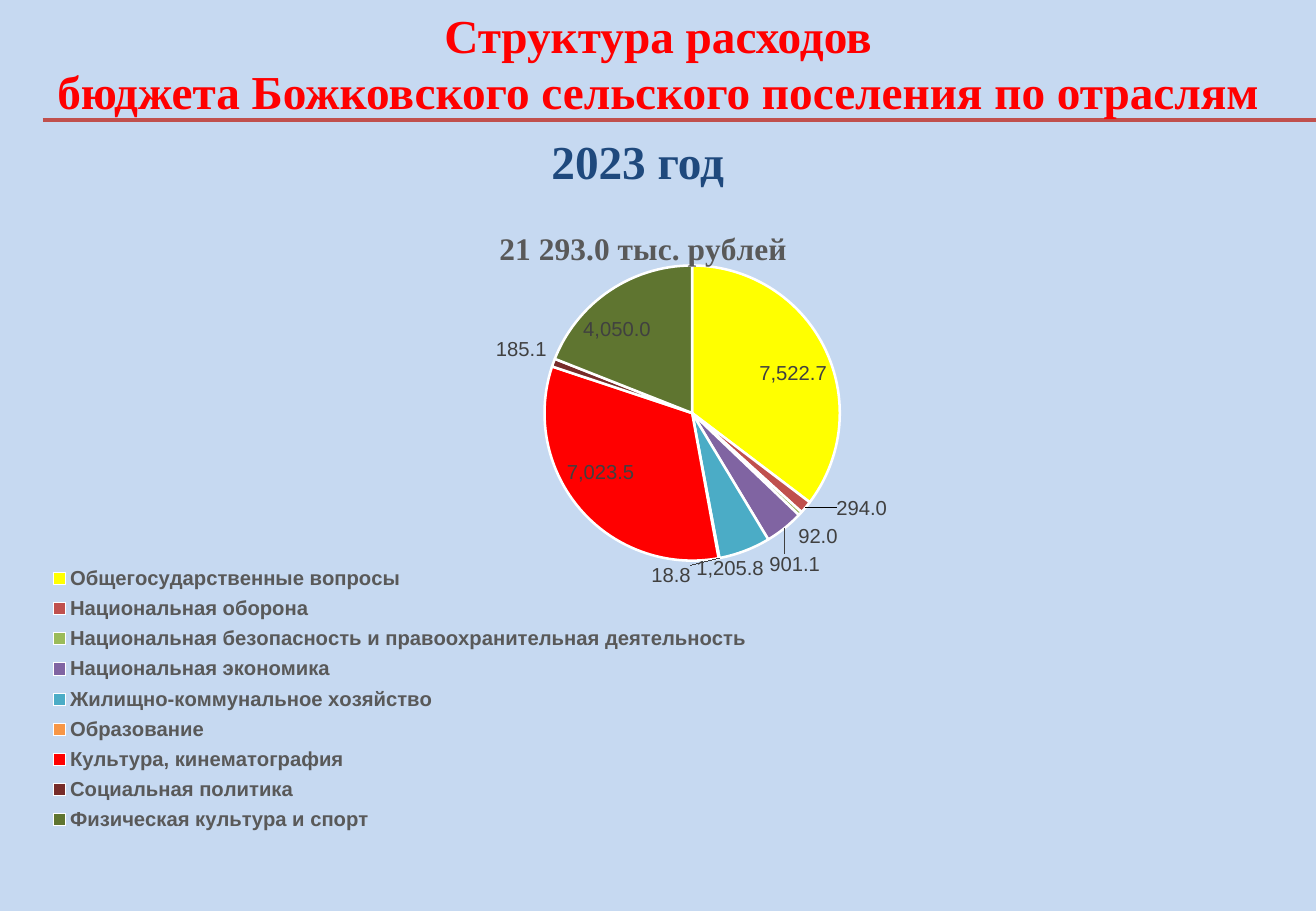
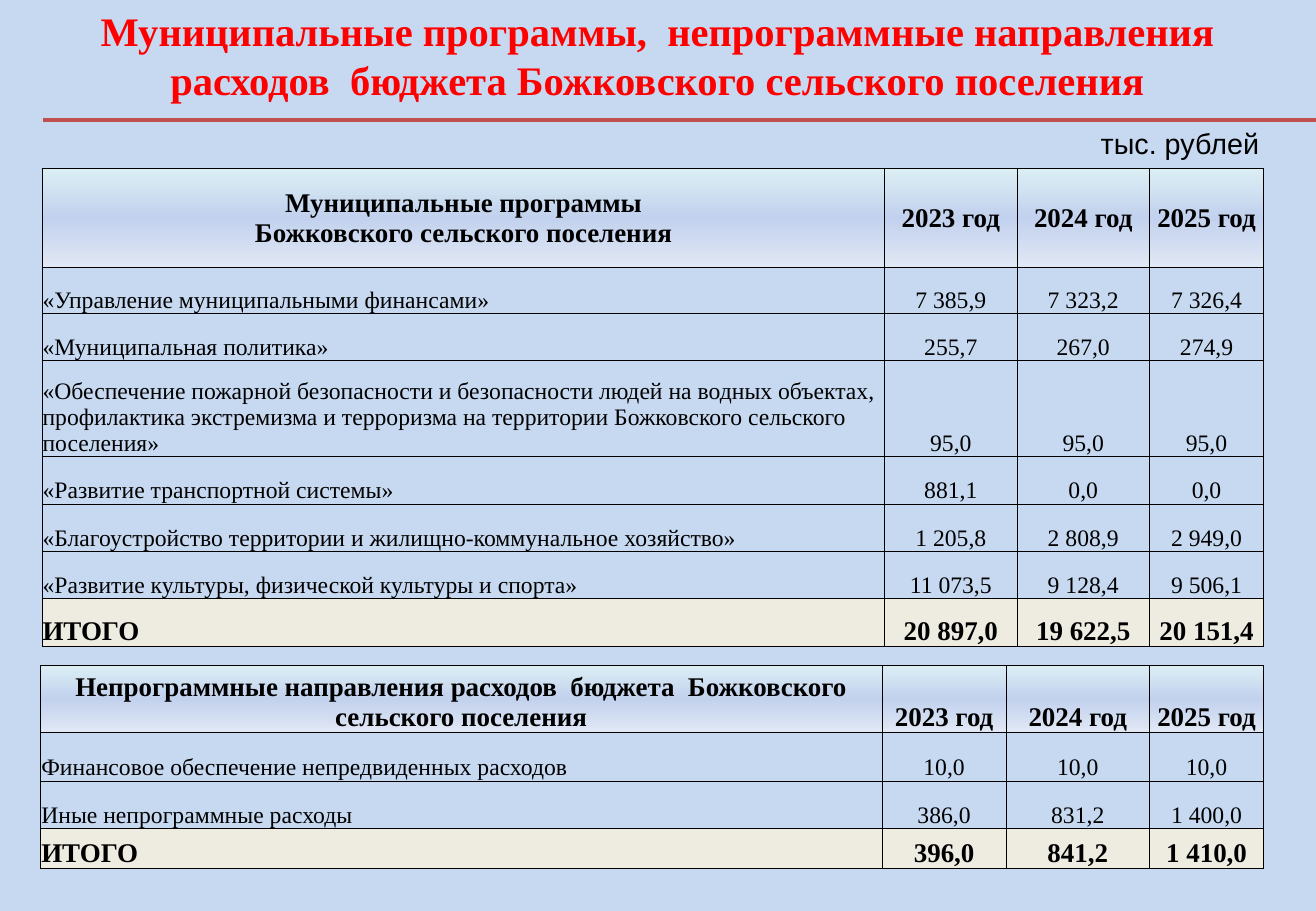
"""Build two budget slides: spending by sector and municipal programmes."""
import pptx
import pptx.chart.data
import pptx.dml.color
import pptx.enum.chart
import pptx.enum.shapes
import pptx.enum.text
import pptx.oxml
import pptx.oxml.ns
import pptx.util

PX = 9144
SERIF, SANS = "Times New Roman", "Arial"
COLORS = {
    "back": "C6D9F1", "rule": "C0504D", "title": "FF0000", "year": "1F497D",
    "text": "000000", "muted": "595959", "label": "404040", "edge": "FFFFFF",
    "total": "EEECE1",
}
SLICE_COLORS = ["FFFF00", "C0504D", "9BBB59", "8064A2", "4BACC6",
                "F79646", "FF0000", "772C2A", "5F7530"]
HEAD_STOPS = [(0, "DBEEF4"), (50, "C2D1ED"), (100, "E1E8F5")]
ALIGN = pptx.enum.text.PP_ALIGN
ANCHOR = pptx.enum.text.MSO_ANCHOR
LABEL_POSITION = pptx.enum.chart.XL_LABEL_POSITION.BEST_FIT

SECTORS = [
    ("Общегосударственные вопросы", 7522.7),
    ("Национальная оборона", 294.0),
    ("Национальная безопасность и правоохранительная деятельность", 92.0),
    ("Национальная экономика", 901.1),
    ("Жилищно-коммунальное хозяйство", 1205.8),
    ("Образование", 18.8),
    ("Культура, кинематография", 7023.5),
    ("Социальная политика", 185.1),
    ("Физическая культура и спорт", 4050.0),
]
YEARS = ("2023 год", "2024 год", "2025 год")
PROGRAMMES = [
    ("Муниципальные программы\nБожковского сельского поселения", *YEARS),
    ("«Управление муниципальными финансами»", "7 385,9", "7 323,2", "7 326,4"),
    ("«Муниципальная политика»", "255,7", "267,0", "274,9"),
    ("«Обеспечение пожарной безопасности и безопасности людей на водных объектах, "
     "профилактика экстремизма и терроризма на территории Божковского сельского "
     "поселения»", "95,0", "95,0", "95,0"),
    ("«Развитие транспортной системы»", "881,1", "0,0", "0,0"),
    ("«Благоустройство территории и жилищно-коммунальное хозяйство»",
     "1 205,8", "2 808,9", "2 949,0"),
    ("«Развитие культуры, физической культуры и спорта»",
     "11 073,5", "9 128,4", "9 506,1"),
    ("ИТОГО", "20 897,0", "19 622,5", "20 151,4"),
]
OTHER_SPENDING = [
    ("Непрограммные направления расходов  бюджета  Божковского сельского поселения",
     *YEARS),
    ("Финансовое обеспечение непредвиденных расходов", "10,0", "10,0", "10,0"),
    ("Иные непрограммные расходы", "386,0", "831,2", "1 400,0"),
    ("ИТОГО", "396,0", "841,2", "1 410,0"),
]


def px(*lengths):
    return [pptx.util.Emu(n * PX) for n in lengths]


def rgb(value):
    return pptx.dml.color.RGBColor.from_string(value)


def set_all(obj, values):
    for name, value in values.items():
        setattr(obj, name, value)


def style_font(font, size, color, name=SERIF, bold=True):
    set_all(font, {"size": pptx.util.Pt(size), "name": name, "bold": bold})
    font.color.rgb = rgb(COLORS[color])


def write(tf, text, align, **style):
    tf.text = text
    for p in tf.paragraphs:
        p.alignment = align
        for r in p.runs:
            style_font(r.font, **style)


def add_text(s, box, text, align=ALIGN.LEFT, wrap=True, **style):
    tf = s.shapes.add_textbox(*px(*box)).text_frame
    tf.word_wrap = wrap
    write(tf, text, align, **style)


def add_slide(prs, title, box, size):
    s = prs.slides.add_slide(prs.slide_layouts[6])
    s.background.fill.solid()
    s.background.fill.fore_color.rgb = rgb(COLORS["back"])
    rule = s.shapes.add_connector(
        pptx.enum.shapes.MSO_CONNECTOR.STRAIGHT, *px(35, 99, 1083, 99))
    rule.line.color.rgb = rgb(COLORS["rule"])
    rule.line.width = pptx.util.Pt(2.5)
    sp_pr = rule._element.spPr
    sp_pr.append(sp_pr.makeelement(pptx.oxml.ns.qn("a:effectLst"), {}))
    add_text(s, box, title, ALIGN.CENTER, size=size, color="title")
    return s


def set_layout(parent, index, edge=True, inner=False, **place):
    for old in parent.findall(pptx.oxml.ns.qn("c:layout")):
        parent.remove(old)
    tags = [("layoutTarget", "inner")] if inner else []
    tags += [("xMode", "edge"), ("yMode", "edge")] if edge else []
    tags += place.items()
    body = "".join(f'<c:{tag} val="{value}"/>' for tag, value in tags)
    parent.insert(index, pptx.oxml.parse_xml(
        f'<c:layout {pptx.oxml.ns.nsdecls("c")}>'
        f'<c:manualLayout>{body}</c:manualLayout></c:layout>'))


def add_pie(s, box, title, sectors):
    data = pptx.chart.data.CategoryChartData(number_format="#,##0.0")
    data.categories = [name for name, _ in sectors]
    data.add_series("Series 1", [value for _, value in sectors])
    chart = s.shapes.add_chart(
        pptx.enum.chart.XL_CHART_TYPE.PIE, *px(*box), data).chart
    style_font(chart.font, 10, "text", SANS, False)
    write(chart.chart_title.text_frame, title, ALIGN.CENTER, size=18.6, color="muted")
    set_layout(chart.chart_title._element, 1, x=0.38, y=0.04)
    set_layout(chart._chartSpace.chart.plotArea, 0, inner=True,
               x=0.077, y=0.1, w=0.923, h=0.422)

    chart.has_legend = True
    set_all(chart.legend, {
        "position": pptx.enum.chart.XL_LEGEND_POSITION.BOTTOM,
        "include_in_layout": False})
    style_font(chart.legend.font, 12, "muted", SANS)
    set_layout(chart.legend._element, 1, x=0.02, y=0.52, w=0.57, h=0.4)

    plot = chart.plots[0]
    plot.vary_by_categories = True
    series = plot.series[0]
    for i, color in enumerate(SLICE_COLORS):
        form = series.points[i].format
        form.fill.solid()
        form.fill.fore_color.rgb = rgb(color)
        form.line.color.rgb = rgb(COLORS["edge"])
        form.line.width = pptx.util.Pt(1.5)
    labels = series.data_labels
    set_all(labels, {
        "show_value": True, "number_format": "#,##0.0",
        "number_format_is_linked": False, "position": LABEL_POSITION})
    defence = series.points[1].data_label
    defence.position = LABEL_POSITION
    for label in (labels, defence):
        style_font(label.font, 12, "label", SANS, False)
    set_layout(defence._get_or_add_dLbl(), 1, edge=False, x=0.02, y=-0.02)


def add_borders(cell):
    tc_pr = cell._tc.get_or_add_tcPr()
    for i, side in enumerate("LRTB"):
        tc_pr.insert(i, pptx.oxml.parse_xml(
            f'<a:ln{side} {pptx.oxml.ns.nsdecls("a")} w="6350"><a:solidFill>'
            f'<a:srgbClr val="{COLORS["text"]}"/></a:solidFill></a:ln{side}>'))


def fill_head(cell):
    stops = "".join(f'<a:gs pos="{pos * 1000}"><a:srgbClr val="{color}"/></a:gs>'
                    for pos, color in HEAD_STOPS)
    cell._tc.get_or_add_tcPr().append(pptx.oxml.parse_xml(
        f'<a:gradFill {pptx.oxml.ns.nsdecls("a")}><a:gsLst>{stops}</a:gsLst>'
        f'<a:lin ang="5400000" scaled="0"/></a:gradFill>'))


def add_budget_table(s, left, top, widths, heights, rows, inset, head_anchor):
    table = s.shapes.add_table(
        len(rows), len(widths),
        *px(left, top, sum(widths), sum(heights))).table
    set_all(table, {"first_row": False, "horz_banding": False})
    for column, width in zip(table.columns, px(*widths)):
        column.width = width
    for row, height in zip(table.rows, px(*heights)):
        row.height = height
    margins = dict(zip(
        ("margin_left", "margin_right", "margin_top", "margin_bottom"),
        px(inset, inset, inset, 0)))
    last = len(rows) - 1
    for i, values in enumerate(rows):
        strong = i in (0, last)
        for j, text in enumerate(values):
            cell = table.cell(i, j)
            set_all(cell, margins)
            cell.vertical_anchor = head_anchor if i == 0 else ANCHOR.BOTTOM
            write(cell.text_frame, text,
                  ALIGN.CENTER if i == 0 or j else ALIGN.LEFT,
                  size=16 if strong else 14, color="text", bold=strong)
            if i == 0:
                fill_head(cell)
            elif i == last:
                cell.fill.solid()
                cell.fill.fore_color.rgb = rgb(COLORS["total"])
            else:
                cell.fill.background()
            add_borders(cell)


def main():
    prs = pptx.Presentation()
    prs.slide_width, prs.slide_height = px(1083, 750)

    s = add_slide(prs, "Структура расходов\nбюджета Божковского сельского "
                  "поселения по отраслям", (0, 0, 1083, 104), 28)
    add_text(s, (444, 104, 174, 57), "2023 год", wrap=False, size=28, color="year")
    add_pie(s, (15, 161, 1030, 576), "21 293.0 тыс. рублей", SECTORS)

    s = add_slide(prs, "Муниципальные программы,  непрограммные направления "
                  "расходов  бюджета Божковского сельского поселения",
                  (38, 0, 1006, 90), 24)
    add_budget_table(s, 35, 139, (693, 109, 109, 94),
                     (81, 38, 39, 79, 39, 39, 39, 39), PROGRAMMES, 0, ANCHOR.MIDDLE)
    add_budget_table(s, 33, 548, (693, 102, 118, 94),
                     (55, 40, 39, 33), OTHER_SPENDING, 1, ANCHOR.BOTTOM)
    add_text(s, (896, 99, 157, 39), "тыс. рублей",
             size=17, color="text", name=SANS, bold=False)
    prs.save("out.pptx")


if __name__ == "__main__":
    main()
